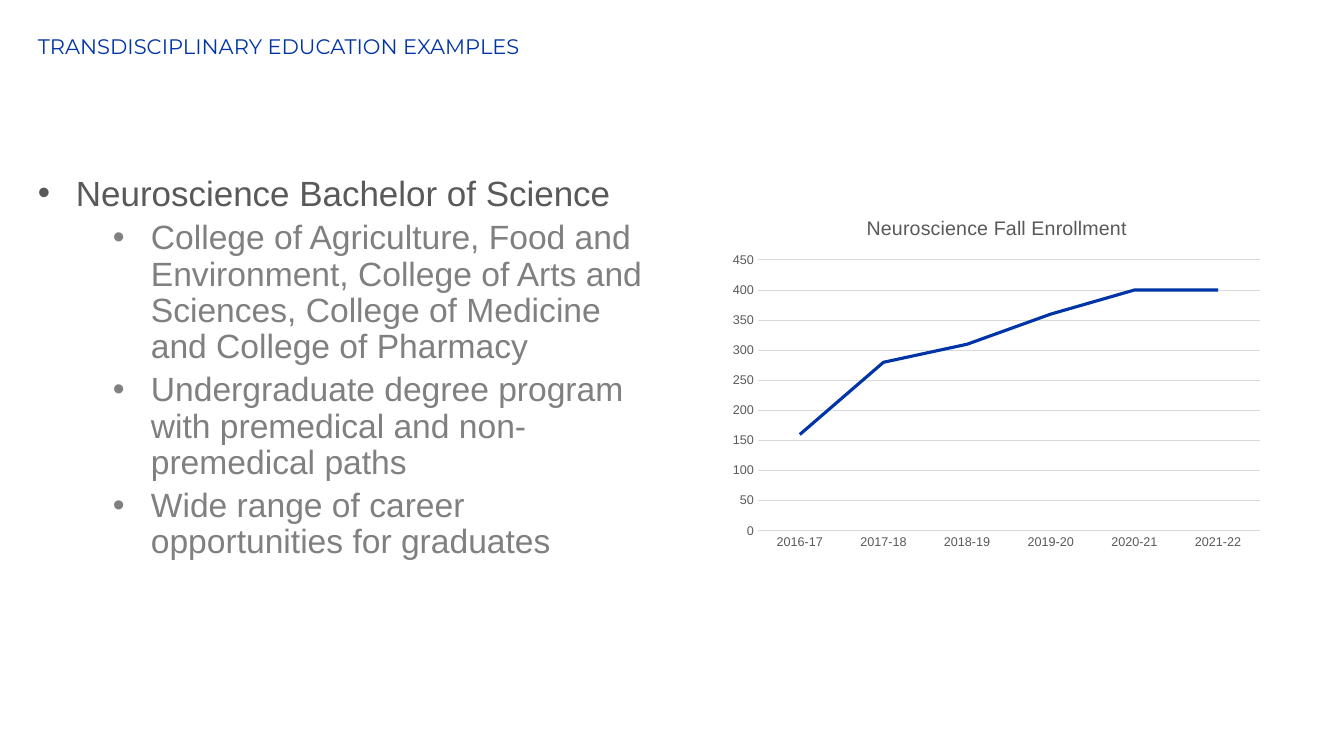
from lxml import etree
from pptx import Presentation
from pptx.chart.data import CategoryChartData
from pptx.dml.color import RGBColor
from pptx.enum.chart import XL_CHART_TYPE, XL_TICK_MARK
from pptx.oxml.ns import qn
from pptx.util import Emu, Pt

LINE = XL_CHART_TYPE.LINE
NO_TICK = XL_TICK_MARK.NONE
EMU_PER_PX = 9144000 / 1008
COLORS = {"blue": "0034A7", "dark": "595959", "gray": "808080", "grid": "D9D9D9"}

DEGREE = "Neuroscience Bachelor of Science"
DETAILS = [
    "College of Agriculture, Food and Environment, College of Arts and Sciences, "
    "College of Medicine and College of Pharmacy",
    "Undergraduate degree program with premedical and non-premedical paths",
    "Wide range of career opportunities for graduates",
]
ENROLLMENT = {"2016-17": 160, "2017-18": 280, "2018-19": 310,
              "2019-20": 360, "2020-21": 400, "2021-22": 400}


def px(n):
    return Emu(round(n * EMU_PER_PX))


def set_font(font, size, color, name="Arial"):
    for key, value in {"size": Pt(size), "name": name, "bold": False}.items():
        setattr(font, key, value)
    font.color.rgb = RGBColor.from_string(COLORS[color])


def set_line(line, color, width):
    line.color.rgb = RGBColor.from_string(COLORS[color])
    line.width = Pt(width)


def add_text_frame(slide, box):
    tf = slide.shapes.add_textbox(*map(px, box)).text_frame
    tf.word_wrap = True
    return tf


def add_heading(slide, box):
    p = add_text_frame(slide, box).paragraphs[0]
    p.text = "TRANSDISCIPLINARY EDUCATION EXAMPLES"
    p.line_spacing = 0.9
    set_font(p.runs[0].font, 15, "blue", "Montserrat")


def format_bullet(p, level, margin):
    """Hang the paragraph behind a round bullet at the given margin."""
    p.level = level
    pPr = p._p.get_or_add_pPr()
    pPr.set("marL", str(px(margin)))
    pPr.set("indent", str(-px(38)))
    etree.SubElement(pPr, qn("a:buFont")).set("typeface", "Arial")
    etree.SubElement(pPr, qn("a:buChar")).set("char", "•")


def add_program(slide, box):
    tf = add_text_frame(slide, box)
    for i, text in enumerate([DEGREE] + DETAILS):
        p = tf.add_paragraph() if i else tf.paragraphs[0]
        p.text = text
        format_bullet(p, *((1, 113) if i else (0, 38)))
        p.line_spacing = 0.9
        if i:
            p.space_before = Pt(5)
        set_font(p.runs[0].font, *((24, "gray") if i else (25, "dark")))


def place_part(part, index, box, **lengths):
    """Fix a chart part at px lengths measured inside the chart's box."""
    for old in part.findall(qn("c:layout")):
        part.remove(old)
    layout = etree.Element(qn("c:layout"))
    manual = etree.SubElement(layout, qn("c:manualLayout"))
    if "w" in lengths:
        etree.SubElement(manual, qn("c:layoutTarget")).set("val", "inner")
    for mode in ("xMode", "yMode"):
        etree.SubElement(manual, qn(f"c:{mode}")).set("val", "edge")
    for key, value in lengths.items():
        whole = box[2] if key in "xw" else box[3]
        etree.SubElement(manual, qn(f"c:{key}")).set("val", str(value / whole))
    part.insert(index, layout)


def add_enrollment_chart(slide, box):
    data = CategoryChartData()
    data.categories = list(ENROLLMENT)
    data.add_series("Series 1", list(ENROLLMENT.values()))
    chart = slide.shapes.add_chart(LINE, *map(px, box), data).chart
    chart.has_legend = False
    chart.font.size = Pt(10)
    chart.font.name = "Calibri"

    chart.has_title = True
    title = chart.chart_title
    title.text_frame.text = "Neuroscience Fall Enrollment"
    set_font(title.text_frame.paragraphs[0].runs[0].font, 14, "dark")
    place_part(title._element, 1, box, x=141, y=13)

    cat_axis, val_axis = chart.category_axis, chart.value_axis
    for axis in (cat_axis, val_axis):
        axis.major_tick_mark = axis.minor_tick_mark = NO_TICK
        set_font(axis.tick_labels.font, 9, "dark")
    set_line(cat_axis.format.line, "grid", 0.75)
    val_axis.format.line.fill.background()
    val_axis.minimum_scale, val_axis.maximum_scale = 0, 450
    val_axis.major_unit = 50
    set_line(val_axis.major_gridlines.format.line, "grid", 0.75)

    plot = chart.plots[0]
    plot.vary_by_categories = False
    series = plot.series[0]
    series.smooth = False
    set_line(series.format.line, "blue", 2.25)
    plot_area = chart._chartSpace.find(".//" + qn("c:plotArea"))
    place_part(plot_area, 0, box, x=36, y=61, w=502, h=271)


def main():
    prs = Presentation()
    prs.slide_width, prs.slide_height = px(1344), px(756)
    slide = prs.slides.add_slide(prs.slide_layouts[6])
    add_heading(slide, (28, 31, 1243, 25))
    add_program(slide, (28, 171, 644, 413))
    add_enrollment_chart(slide, (722, 199, 549, 358))
    prs.save("out.pptx")


if __name__ == "__main__":
    main()
